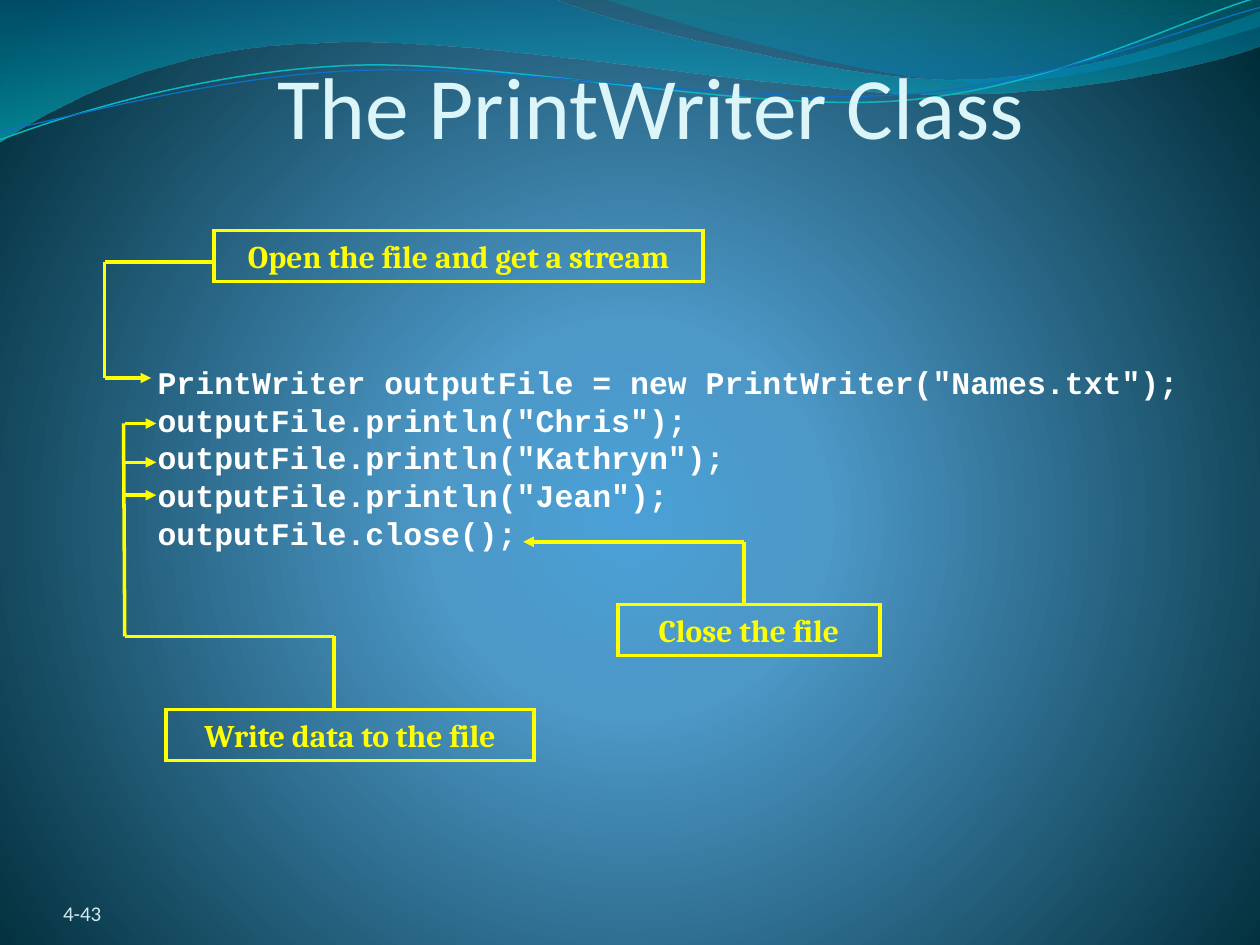
import math
from dataclasses import dataclass
from typing import NamedTuple

from lxml import etree
from pptx import Presentation
from pptx.dml.color import RGBColor
from pptx.enum import shapes, text
from pptx.oxml import ns
from pptx.util import Pt

YELLOW = RGBColor(0xFF, 0xFF, 0x00)
WHITE = RGBColor(0xFF, 0xFF, 0xFF)
TITLE_COLOR = RGBColor(0xDB, 0xF5, 0xF9)
NUMBER_COLOR = RGBColor(0xD1, 0xEA, 0xEE)
AQUA = RGBColor(0x0A, 0xB8, 0xBF)
BLUE = RGBColor(0x0F, 0x6F, 0xC6)
GLOW = RGBColor(0x4A, 0xA0, 0xD6)
SKY = RGBColor(0x4C, 0x98, 0xC7)
DEEP = RGBColor(0x00, 0x2C, 0x38)
WAVE_BLUE = RGBColor(0x00, 0x74, 0xA1)
WAVE_TEAL = RGBColor(0x00, 0xC6, 0xCF)
CREST_TEAL = RGBColor(0x00, 0xA1, 0xA9)
CREST_BLUE = RGBColor(0x00, 0x8B, 0xBF)

TILT = -2.7
Point = tuple[float, float]


class Stop(NamedTuple):
    percent: int
    color: RGBColor
    opacity: int = 100


@dataclass
class Wave:
    start: Point
    segments: list[tuple[float, ...]]
    stops: tuple[Stop, ...] = ()
    color: RGBColor | None = None
    weight: float = 0
    center: Point | None = None


@dataclass
class Callout:
    label: str
    left: float
    top: float
    width: float
    lines: list[tuple[Point, Point]]
    arrows: list[tuple[Point, Point]]


WAVES = [
    Wave((0, 0), [(316.8, -0.7),
                  (342.7, 12.2, 478.1, 45.4, 545.8, 45.4),
                  (614.2, 45.4, 689.8, 18.7, 720, 6.5),
                  (720.7, 25.9),
                  (707.8, 31.7, 626.4, 54.7, 537.1, 54),
                  (447.8, 54, 275, 20.2, 185, 24.5),
                  (92.9, 25.9, 33.1, 59.8, -0.7, 81.4)],
         stops=(Stop(0, WAVE_BLUE, 45), Stop(100, WAVE_TEAL, 55))),
    Wave((344.9, -0.7), [(366.5, 7.9, 491, 44.6, 553.7, 46.8),
                         (616.3, 49.7, 691.9, 23, 720, 15.1),
                         (720, 0)],
         stops=(Stop(0, CREST_TEAL, 30), Stop(80, CREST_BLUE, 45))),
    Wave((0, 79.9), [(34.6, 67, 113.8, 41, 199.4, 37.4),
                     (284.4, 33.8, 427, 64.1, 513.4, 57.6),
                     (599.8, 51.1, 675.4, 10.8, 718.6, -1.4)],
         color=AQUA, weight=0.85, center=(359.3, 41.4)),
    Wave((0, 74.9), [(33.8, 69.1, 118.1, 43.9, 203.8, 40.3),
                     (290.2, 36.7, 429.8, 60.5, 516.2, 54),
                     (601.9, 48.2, 677.5, 15.1, 720, 4.3)],
         color=BLUE, weight=0.75, center=(359.6, 42.5)),
]

CALLOUTS = [
    Callout("Open the file and get a stream", 122.4, 131.8, 279.4,
            lines=[((59.8, 149.8), (59.8, 216)), ((122.4, 149.8), (59.8, 149.8))],
            arrows=[((59.8, 216), (86.4, 216))]),
    Callout("Write data to the file", 95, 405.4, 210.2,
            lines=[((70.6, 242), (71.3, 363.6)), ((71.3, 363.6), (190.8, 363.6)),
                   ((190.8, 363.6), (190.8, 405.4))],
            arrows=[((71.3, y), (89.3, y)) for y in (242, 264.2, 283)]),
    Callout("Close the file", 353, 345.4, 149.8,
            lines=[((425, 345.4), (425, 309.6))],
            arrows=[((425, 309.6), (299, 309.6))]),
]

CODE = """PrintWriter outputFile = new PrintWriter("Names.txt");
outputFile.println("Chris");
outputFile.println("Kathryn");
outputFile.println("Jean");
outputFile.close();"""


def set_gradient(fill, owner, stops: tuple[Stop, ...], radial: bool = False) -> None:
    fill.gradient()
    gradient = next(owner.iter(ns.qn("a:gradFill")))
    for child in list(gradient):
        gradient.remove(child)
    stop_list = etree.SubElement(gradient, ns.qn("a:gsLst"))
    for stop in stops:
        mark = etree.SubElement(stop_list, ns.qn("a:gs"), pos=str(stop.percent * 1000))
        color = etree.SubElement(mark, ns.qn("a:srgbClr"), val=str(stop.color))
        if stop.opacity < 100:
            etree.SubElement(color, ns.qn("a:alpha"), val=str(stop.opacity * 1000))
    if radial:
        circle = etree.SubElement(gradient, ns.qn("a:path"), path="circle")
        etree.SubElement(circle, ns.qn("a:fillToRect"),
                         l="10000", t="110000", r="10000", b="100000")
    else:
        etree.SubElement(gradient, ns.qn("a:lin"), ang="5400000", scaled="1")


def level(point: Point, center: Point | None) -> Point:
    if center is None:
        return point
    angle = math.radians(-TILT)
    dx, dy = point[0] - center[0], point[1] - center[1]
    return (center[0] + dx * math.cos(angle) - dy * math.sin(angle),
            center[1] + dx * math.sin(angle) + dy * math.cos(angle))


def draw_wave(slide, wave: Wave) -> None:
    points = [wave.start]
    for segment in wave.segments:
        points.extend(zip(segment[::2], segment[1::2]))
    start, *rest = [tuple(map(Pt, level(point, wave.center))) for point in points]
    builder = slide.shapes.build_freeform(*start)
    builder.add_line_segments(rest, close=bool(wave.stops))
    ribbon = builder.convert_to_shape()
    steps = iter(list(ribbon._element.iter(ns.qn("a:lnTo"))))
    for segment in wave.segments:
        step = next(steps)
        if len(segment) == 6:
            step.addprevious(curve := etree.Element(ns.qn("a:cubicBezTo")))
            for corner in (step, next(steps), next(steps)):
                curve.append(corner[0])
                corner.getparent().remove(corner)
    ribbon.shadow.inherit = False
    if wave.stops:
        set_gradient(ribbon.fill, ribbon._element.spPr, wave.stops)
        ribbon.line.fill.background()
    else:
        ribbon.rotation = TILT
        ribbon.fill.background()
        ribbon.line.color.rgb = wave.color
        ribbon.line.width = Pt(wave.weight)


def style_text(frame, font_name: str, size: float, color: RGBColor, bold: bool = False,
               align=text.PP_ALIGN.LEFT, anchor=text.MSO_ANCHOR.TOP) -> None:
    frame.word_wrap = True
    frame.auto_size = text.MSO_AUTO_SIZE.NONE
    frame.vertical_anchor = anchor
    for paragraph in frame.paragraphs:
        paragraph.alignment = align
        for run in paragraph.runs:
            run.font.name = font_name
            run.font.size = Pt(size)
            run.font.bold = bold
            run.font.color.rgb = color


def draw_line(slide, start: Point, end: Point, arrow: bool = False) -> None:
    line = slide.shapes.add_connector(shapes.MSO_CONNECTOR.STRAIGHT,
                                      *map(Pt, start), *map(Pt, end))
    line.line.color.rgb = YELLOW
    line.line.width = Pt(2)
    if arrow:
        etree.SubElement(line.line._get_or_add_ln(), ns.qn("a:tailEnd"), type="triangle")
    etree.SubElement(line._element.spPr, ns.qn("a:effectLst"))


def draw_callout(slide, callout: Callout) -> None:
    box = slide.shapes.add_shape(shapes.MSO_SHAPE.RECTANGLE, Pt(callout.left),
                                 Pt(callout.top), Pt(callout.width), Pt(29.1))
    box.shadow.inherit = False
    box.fill.background()
    box.line.color.rgb = YELLOW
    box.line.width = Pt(2)
    etree.SubElement(box.line._get_or_add_ln(), ns.qn("a:miter"), lim="800000")
    box.text_frame.text = callout.label
    style_text(box.text_frame, "Cambria", 18, YELLOW, True, text.PP_ALIGN.CENTER)
    for start, end in callout.lines:
        draw_line(slide, start, end)
    for start, end in callout.arrows:
        draw_line(slide, start, end, arrow=True)


def main() -> None:
    deck = Presentation()
    deck.slide_width, deck.slide_height = Pt(720), Pt(540)
    slide = deck.slides.add_slide(deck.slide_layouts[5])
    set_gradient(slide.background.fill, slide._element,
                 (Stop(0, GLOW), Stop(25, SKY), Stop(100, DEEP)), radial=True)
    for wave in WAVES:
        draw_wave(slide, wave)

    number = slide.shapes.add_textbox(Pt(36), Pt(500.4), Pt(168), Pt(28.8)).text_frame
    number.margin_left = number.margin_right = number.margin_top = number.margin_bottom = 0
    number.text = "4-43"
    style_text(number, "Calibri", 12, NUMBER_COLOR, anchor=text.MSO_ANCHOR.BOTTOM)

    title = slide.shapes.title
    slide.shapes._spTree.append(title._element)
    title.left, title.top, title.width, title.height = Pt(48), Pt(24), Pt(648), Pt(66)
    heading = title.text_frame
    heading.margin_left = heading.margin_right = heading.margin_bottom = 0
    heading.margin_top = Pt(3.6)
    heading.text = "The PrintWriter Class"
    style_text(heading, "Calibri", 50, TITLE_COLOR, align=text.PP_ALIGN.CENTER,
               anchor=text.MSO_ANCHOR.BOTTOM)

    code = slide.shapes.add_textbox(Pt(83), Pt(203.8), Pt(612), Pt(115.2)).text_frame
    code.text = CODE
    style_text(code, "Courier New", 18, WHITE, True)

    for callout in CALLOUTS:
        draw_callout(slide, callout)
    deck.save("out.pptx")


if __name__ == "__main__":
    main()
